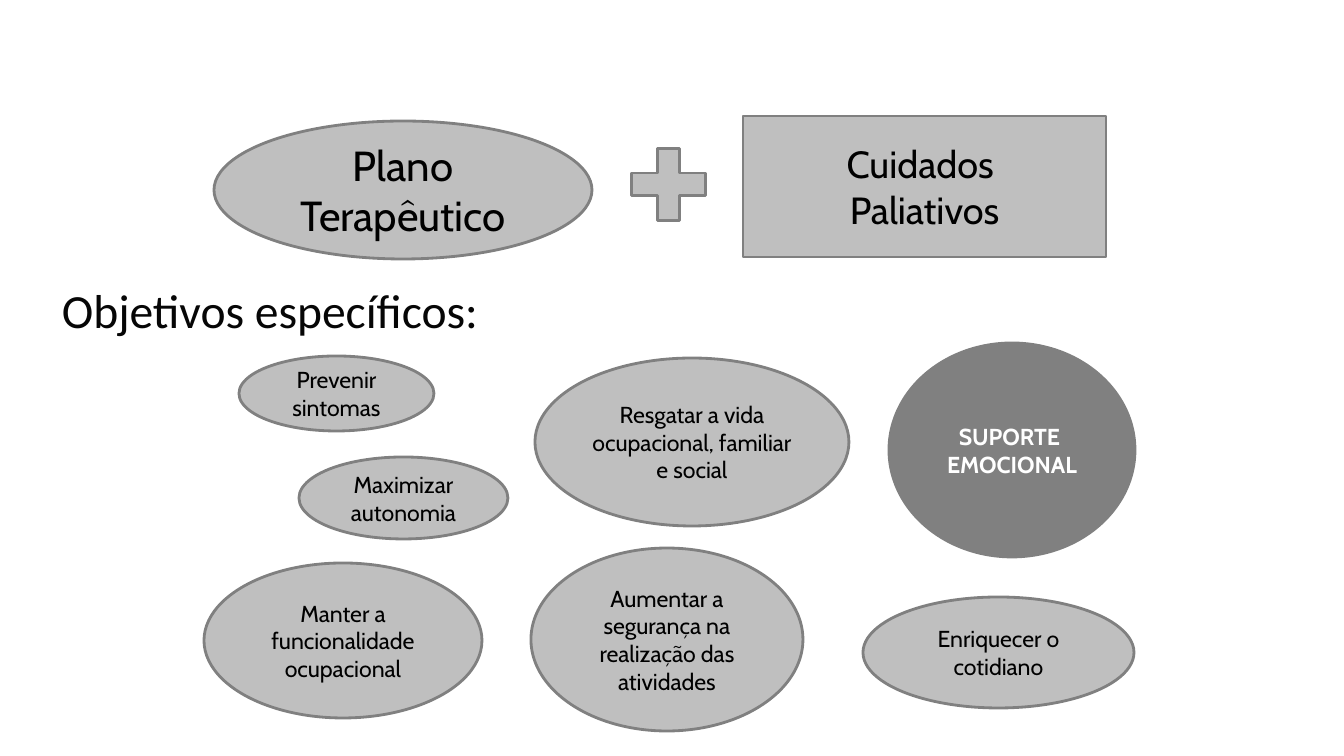
import pptx
import pptx.dml.color
import pptx.enum.shapes
import pptx.enum.text
import pptx.util

SHAPE = pptx.enum.shapes.MSO_SHAPE
ALIGN = pptx.enum.text.PP_ALIGN
ANCHOR = pptx.enum.text.MSO_ANCHOR

SLIDE_SIZE = (1344, 756)
PX = 914400 / 100.8
LIGHT, GREY, BLACK, WHITE = "BFBFBF", "808080", "000000", "FFFFFF"

HEADING = ("Objetivos específicos:", (52, 276, 793, 274))
PLAN = [
    (SHAPE.OVAL, (214, 121, 378, 138), ["Plano Terapêutico"], 30),
    (SHAPE.RECTANGLE, (743, 116, 363, 141), ["Cuidados ", "Paliativos"], 27),
    (SHAPE.MATH_PLUS, (618, 136, 101, 97), [], 27),
]
GOALS = [
    ((239, 356, 195, 75), "Prevenir sintomas"),
    ((299, 457, 209, 82), "Maximizar autonomia"),
    ((204, 563, 278, 155), "Manter a funcionalidade ocupacional"),
    ((863, 597, 271, 111), "Enriquecer o cotidiano"),
    ((531, 548, 272, 183), "Aumentar a segurança na realização das atividades"),
    ((535, 358, 314, 168), "Resgatar a vida ocupacional, familiar e social"),
]
GOAL_SIZE = 16.5
SUPPORT = ((889, 343, 246, 214), ["SUPORTE ", "EMOCIONAL"])


def color(value):
    return pptx.dml.color.RGBColor.from_string(value)


def emu(lengths):
    return [round(length * PX) for length in lengths]


def write(frame, lines, font_name, size, ink, align, bold=False):
    frame.word_wrap = True
    for index, line in enumerate(lines):
        paragraph = frame.add_paragraph() if index else frame.paragraphs[0]
        paragraph.text = line
        paragraph.alignment = align
        paragraph.font.name = font_name
        paragraph.font.size = pptx.util.Pt(size)
        paragraph.font.bold = bold
        paragraph.font.color.rgb = color(ink)


def add_bubble(slide, outline, box, lines, size, fill=LIGHT, ink=BLACK, bold=False):
    bubble = slide.shapes.add_shape(outline, *emu(box))
    bubble.shadow.inherit = False
    bubble.fill.solid()
    bubble.fill.fore_color.rgb = color(fill)
    bubble.line.color.rgb = color(GREY)
    bubble.line.width = pptx.util.Pt(2)
    bubble.text_frame.vertical_anchor = ANCHOR.MIDDLE
    write(bubble.text_frame, lines, "Cabin", size, ink, ALIGN.CENTER, bold)


def main():
    deck = pptx.Presentation()
    deck.slide_width, deck.slide_height = emu(SLIDE_SIZE)
    slide = deck.slides.add_slide(deck.slide_layouts[6])

    text, box = HEADING
    heading = slide.shapes.add_textbox(*emu(box)).text_frame
    write(heading, [text], "Calibri", 34, "060606", ALIGN.LEFT)
    heading.paragraphs[0].space_before = pptx.util.Pt(7)

    for outline, box, lines, size in PLAN:
        add_bubble(slide, outline, box, lines, size)
    for box, goal in GOALS:
        add_bubble(slide, SHAPE.OVAL, box, [goal], GOAL_SIZE)
    box, lines = SUPPORT
    add_bubble(slide, SHAPE.OVAL, box, lines, GOAL_SIZE, GREY, WHITE, True)

    deck.save("out.pptx")


if __name__ == "__main__":
    main()
